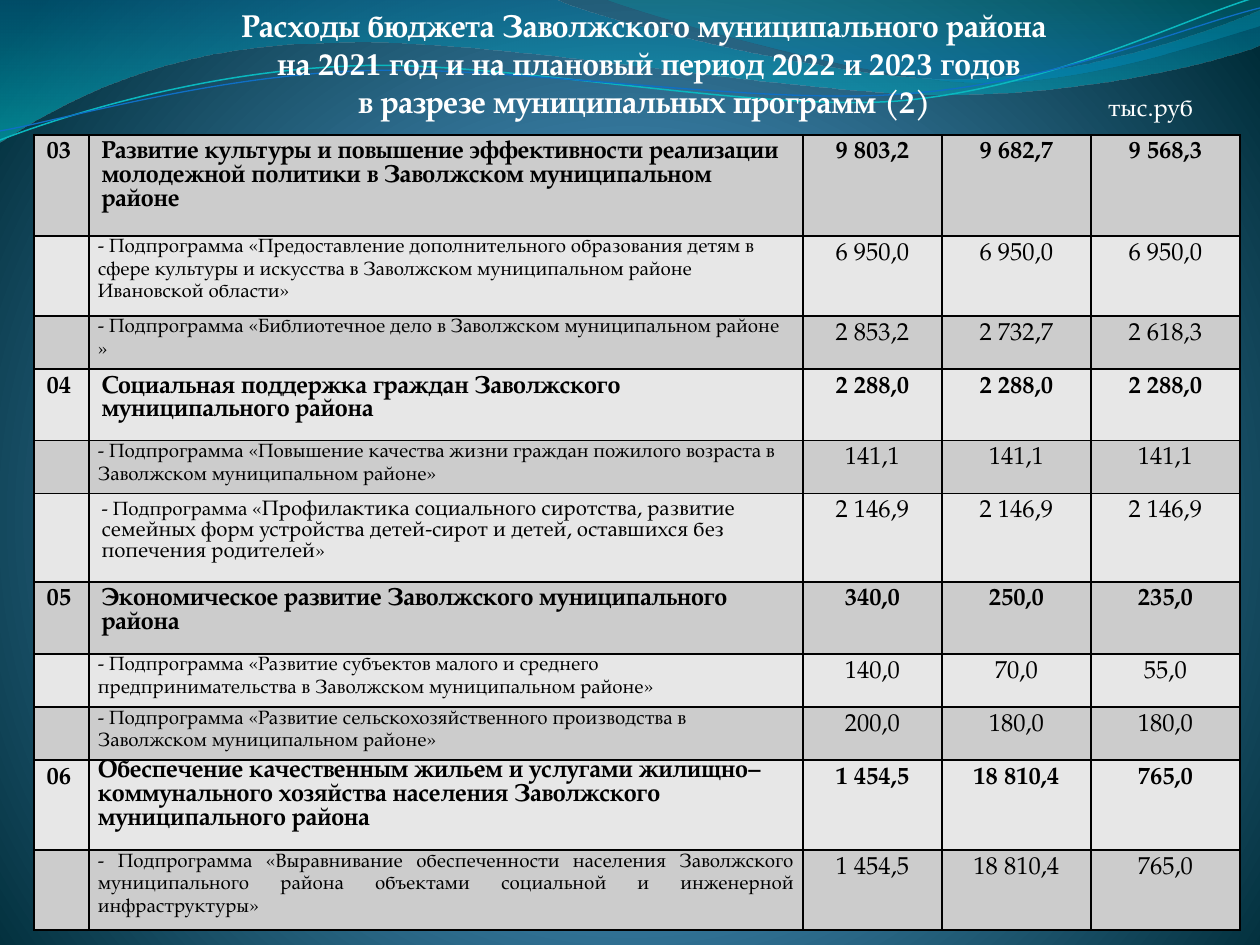
from lxml.etree import SubElement
from pptx import Presentation
from pptx.dml.color import RGBColor
from pptx.enum.text import MSO_AUTO_SIZE, PP_ALIGN
from pptx.oxml import parse_xml
from pptx.oxml.ns import nsdecls, qn
from pptx.util import Pt

SCALE = 914400 / 126
FONT, DIGIT = "TeX Gyre Pagella", "Times New Roman"
COLORS = {
    "text": "000000", "light": "FFFFFF", "odd": "CCCCCC", "even": "E7E7E7",
    "glow": "4AA0D6", "mid": "4C98C7", "deep": "002C38",
    "blue": "0074A1", "aqua": "00C6CF", "teal": "00A1A9", "sky": "008BBF",
    "cyan": "0AB8BF", "navy": "0F6FC6",
}
LEFT, CENTER, JUST = PP_ALIGN.LEFT, PP_ALIGN.CENTER, PP_ALIGN.JUSTIFY

# Curves: a pair is a straight step, six numbers are a Bezier step
WAVE = [(0, 0), (554, -1), (600, 21, 837, 79, 955, 79),
        (1074, 79, 1207, 33, 1260, 11), (1261, 45),
        (1239, 55, 1096, 96, 940, 94), (784, 94, 481, 35, 324, 43),
        (162, 45, 58, 105, -1, 142)]
CREST = [(604, -1), (641, 14, 859, 78, 969, 82),
         (1079, 87, 1211, 40, 1260, 26), (1260, 0)]
UPPER = [(0, 140), (60, 117, 199, 72, 349, 66),
         (498, 59, 747, 112, 898, 101), (1050, 88, 1182, 19, 1257, -3)]
LOWER = [(0, 131), (59, 121, 207, 77, 357, 71),
         (508, 64, 752, 106, 903, 94), (1053, 84, 1186, 26, 1260, 8)]

TITLE = [
    [("Расходы бюджета Заволжского муниципального района", FONT)],
    [(" на 20", FONT), ("21", DIGIT), (" год и на плановый период 202", FONT),
     ("2", DIGIT), (" и 202", FONT), ("3", DIGIT), (" годов", FONT)],
    [("в разрезе муниципальных программ (2)", FONT)],
]

COLS = [55, 714, 139, 149, 149]
# Height, code, name (or sized runs), three yearly sums
ROWS = [
    (101, "03", "Развитие культуры и повышение эффективности реализации молодежной политики в Заволжском муниципальном районе",
     ["9 803,2", "9 682,7", "9 568,3"]),
    (80, "", "- Подпрограмма «Предоставление дополнительного образования детям в сфере культуры и искусства в Заволжском муниципальном районе Ивановской области»",
     ["6 950,0", "6 950,0", "6 950,0"]),
    (53, "", "- Подпрограмма «Библиотечное дело в Заволжском муниципальном районе »",
     ["2 853,2", "2 732,7", "2 618,3"]),
    (71, "04", "Социальная поддержка граждан Заволжского муниципального района",
     ["2 288,0", "2 288,0", "2 288,0"]),
    (53, "", "- Подпрограмма «Повышение качества жизни граждан пожилого возраста в Заволжском муниципальном районе»",
     ["141,1", "141,1", "141,1"]),
    (88, "", [("- Подпрограмма «", 11),
              ("Профилактика социального сиротства, развитие семейных форм устройства детей-сирот и детей, оставшихся без попечения родителей", 12),
              ("»", 11)],
     ["2 146,9", "2 146,9", "2 146,9"]),
    (72, "05", "Экономическое развитие Заволжского муниципального района",
     ["340,0", "250,0", "235,0"]),
    (53, "", "- Подпрограмма «Развитие субъектов малого и среднего предпринимательства в Заволжском муниципальном районе»",
     ["140,0", "70,0", "55,0"]),
    (53, "", "- Подпрограмма «Развитие сельскохозяйственного производства в Заволжском муниципальном районе»",
     ["200,0", "180,0", "180,0"]),
    (90, "06", "Обеспечение качественным жильем и услугами жилищно–коммунального хозяйства населения Заволжского муниципального района",
     ["1 454,5", "18 810,4", "765,0"]),
    (79, "", "- Подпрограмма «Выравнивание обеспеченности населения Заволжского муниципального района объектами социальной и инженерной инфраструктуры»",
     ["1 454,5", "18 810,4", "765,0"]),
]


def px(n):
    return round(n * SCALE)


def rgb(name):
    return RGBColor.from_string(COLORS[name])


def grad(stops, course):
    marks = "".join(
        f'<a:gs pos="{pos * 1000}"><a:srgbClr val="{COLORS[name]}">'
        f'<a:alpha val="{alpha * 1000}"/></a:srgbClr></a:gs>'
        for pos, name, alpha in stops)
    return (f'<a:gradFill {nsdecls("a")} rotWithShape="1">'
            f'<a:gsLst>{marks}</a:gsLst>{course}</a:gradFill>')


class Deck:
    def __init__(self, wide, high):
        self.show = Presentation()
        self.show.slide_width, self.show.slide_height = px(wide), px(high)
        self.slide = self.show.slides.add_slide(self.show.slide_layouts[6])

    def back(self, stops):
        course = ('<a:path path="circle"><a:fillToRect l="10000" t="110000" '
                  'r="10000" b="100000"/></a:path>')
        self.slide._element.cSld.insert(0, parse_xml(
            f'<p:bg {nsdecls("p", "a")}><p:bgPr>{grad(stops, course)}'
            '<a:effectLst/></p:bgPr></p:bg>'))

    def curve(self, steps, closed):
        ends = [(px(step[-2]), px(step[-1])) for step in steps]
        pen = self.slide.shapes.build_freeform(*ends[0])
        pen.add_line_segments(ends[1:], close=closed)
        shape = pen.convert_to_shape()
        shape.shadow.inherit = False
        # Bend the straight segments that have control points
        legs = list(shape._element.iter(qn("a:lnTo")))
        for leg, step in zip(legs, steps[1:]):
            if len(step) == 6:
                dots = "".join(
                    f'<a:pt x="{px(x) - shape.left}" y="{px(y) - shape.top}"/>'
                    for x, y in zip(step[::2], step[1::2]))
                leg.getparent().replace(leg, parse_xml(
                    f'<a:cubicBezTo {nsdecls("a")}>{dots}</a:cubicBezTo>'))
        return shape

    def area(self, steps, stops):
        shape = self.curve(steps, True)
        shape.line.fill.background()
        fill = grad(stops, '<a:lin ang="5400000" scaled="1"/>')
        shape._element.spPr.find(qn("a:custGeom")).addnext(parse_xml(fill))

    def stroke(self, steps, color, width):
        shape = self.curve(steps, False)
        shape.fill.background()
        shape.line.color.rgb = rgb(color)
        shape.line.width = Pt(width)

    def style(self, para, size, color, bold=False, align=LEFT, space=None):
        font = para.font
        font.name, font.size, font.bold = FONT, Pt(size), bold
        font.color.rgb = rgb(color)
        para.alignment, para.line_spacing = align, space

    def text(self, box, lines, size, bold=False, align=LEFT, wrap=True):
        frame = self.slide.shapes.add_textbox(*map(px, box)).text_frame
        frame.word_wrap, frame.auto_size = wrap, MSO_AUTO_SIZE.SHAPE_TO_FIT_TEXT
        for i, runs in enumerate(lines):
            para = frame.paragraphs[0] if i == 0 else frame.add_paragraph()
            self.style(para, size, "light", bold, align)
            for words, face in runs:
                run = para.add_run()
                run.text, run.font.name = words, face

    def cell(self, cell, words, fill, size=14, bold=False, align=LEFT,
             space=None, tight=False):
        cell.fill.solid()
        cell.fill.fore_color.rgb = rgb(fill)
        if tight:
            cell.margin_left = cell.margin_right = px(9)
            cell.margin_top = cell.margin_bottom = 0
        para = cell.text_frame.paragraphs[0]
        self.style(para, size, "text", bold, align, space)
        for part, points in ([(words, size)] if isinstance(words, str) else words):
            if part:
                run = para.add_run()
                run.text, run.font.size = part, Pt(points)
        props = cell._tc.get_or_add_tcPr()
        for i, side in enumerate("LRTB"):
            line = parse_xml(f'<a:ln{side} {nsdecls("a")} w="12700"/>')
            paint = SubElement(line, qn("a:solidFill"))
            SubElement(paint, qn("a:srgbClr")).set("val", COLORS["text"])
            props.insert(i, line)

    def table(self, left, top, cols, rows):
        high = sum(row[0] for row in rows)
        grid = self.slide.shapes.add_table(
            len(rows), len(cols), px(left), px(top), px(sum(cols)), px(high)).table
        for col, width in zip(grid.columns, cols):
            col.width = px(width)
        for i, (height, code, name, sums) in enumerate(rows):
            grid.rows[i].height = px(height)
            fill, bold = "even" if i % 2 else "odd", bool(code)
            self.cell(grid.cell(i, 0), code, fill, bold=bold)
            sub = not code and isinstance(name, str)
            self.cell(grid.cell(i, 1), name, fill, 11 if sub else 14, bold,
                      JUST if i == len(rows) - 1 else LEFT,
                      1.15 if sub else None, sub or code == "06")
            for j, value in enumerate(sums, 2):
                self.cell(grid.cell(i, j), value, fill, bold=bold, align=CENTER)


def main():
    deck = Deck(1260, 945)
    # Backdrop
    deck.back([(0, "glow", 100), (25, "mid", 100), (100, "deep", 100)])
    deck.area(WAVE, [(0, "blue", 45), (100, "aqua", 55)])
    deck.area(CREST, [(0, "teal", 30), (80, "sky", 45)])
    deck.stroke(UPPER, "cyan", 0.85)
    deck.stroke(LOWER, "navy", 0.75)
    # Heading and unit
    deck.text((54, 0, 1181, 127), TITLE, 18, True, CENTER)
    deck.text((1096, 86, 113, 43), [[("тыс.руб.", FONT)]], 14, wrap=False)
    # Spending by programme
    deck.table(34, 135, COLS, ROWS)
    deck.show.save("out.pptx")


if __name__ == "__main__":
    main()
